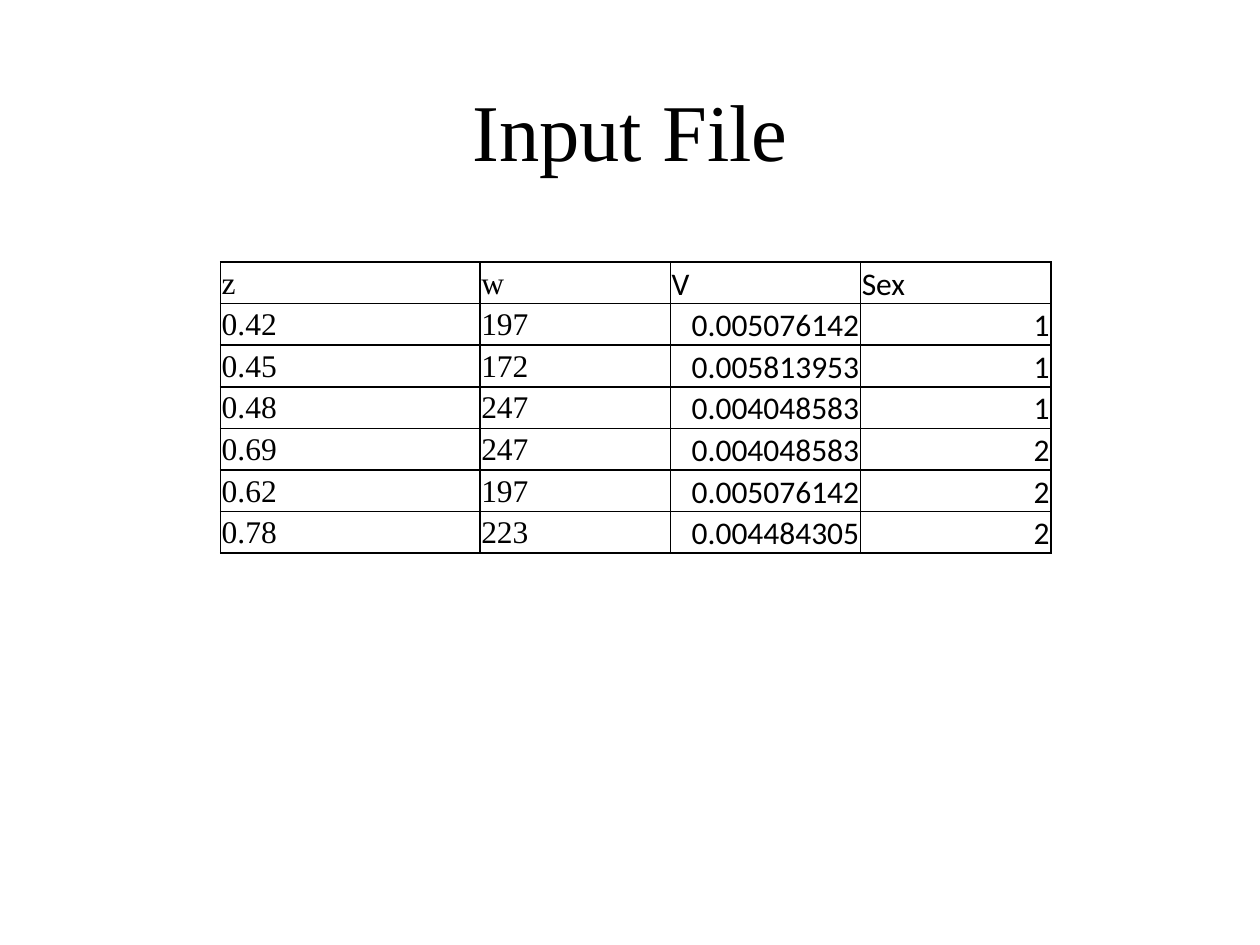
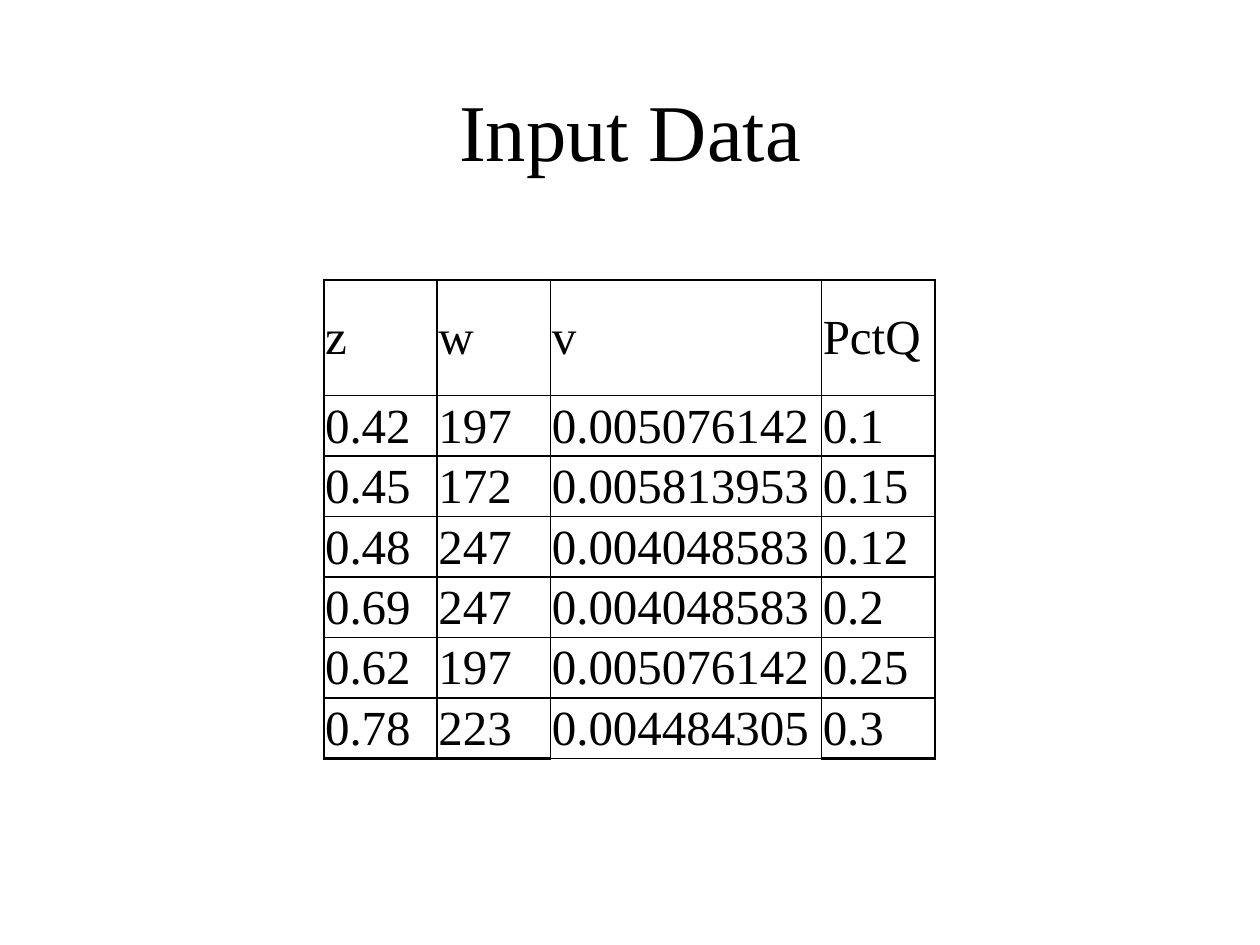
from dataclasses import dataclass

from lxml.etree import SubElement
from pptx import Presentation
from pptx.dml.color import RGBColor
from pptx.enum.text import MSO_ANCHOR as Anchor, PP_ALIGN as Align
from pptx.oxml.ns import qn
from pptx.util import Inches, Pt


# Theme
@dataclass(frozen=True)
class Theme:
    ink: str = "000000"
    paper: str = "FFFFFF"
    serif: str = "Times New Roman"
    sans: str = "Calibri"
    title_size: int = 46
    thin: float = 1
    heavy: float = 1.5
    cell_inset: float = 0.01


THEME = Theme()
INK = RGBColor.from_string(THEME.ink)
WIDTH, HEIGHT = 10, 7.5
TITLE_BOX = (1, 0.55, 8, 0.95)

# Content: measurements shared by both slides, then one extra column each
SAMPLES = [
    ("0.42", "197", "0.005076142"),
    ("0.45", "172", "0.005813953"),
    ("0.48", "247", "0.004048583"),
    ("0.69", "247", "0.004048583"),
    ("0.62", "197", "0.005076142"),
    ("0.78", "223", "0.004484305"),
]
SLIDES = [
    {
        "title": "Input File",
        "header": ("z", "w", "V", "Sex"),
        "extra": ("1", "1", "1", "2", "2", "2"),
        "corner": (1.75, 2.08),
        "columns": (2.06, 1.51, 1.51, 1.51),
        "header_height": 0.33,
        "row_height": 0.33,
        "size": 18,
        "sans_columns": (2, 3),
        "heavy_edges": (),
        "heavy_foot_columns": (),
    },
    {
        "title": "Input Data",
        "header": ("z", "w", "v", "PctQ"),
        "extra": ("0.1", "0.15", "0.12", "0.2", "0.25", "0.3"),
        "corner": (2.57, 2.22),
        "columns": (0.9, 0.9, 2.15, 0.9),
        "header_height": 0.92,
        "row_height": 0.48,
        "size": 28,
        "sans_columns": (),
        "heavy_edges": ("top", "right"),
        "heavy_foot_columns": (0, 1, 3),
    },
]


def style_paragraph(para, text, size, font_name, align):
    para.text = text
    para.alignment = align
    para.font.size = Pt(size)
    para.font.name = font_name
    para.font.color.rgb = INK


def add_title(page, text):
    box = page.shapes.add_textbox(*map(Inches, TITLE_BOX))
    frame = box.text_frame
    frame.word_wrap = True
    frame.vertical_anchor = Anchor.MIDDLE
    style_paragraph(frame.paragraphs[0], text, THEME.title_size, THEME.serif, Align.CENTER)


def set_borders(cell, heavy_sides):
    properties = cell._tc.get_or_add_tcPr()
    for side in ("left", "right", "top", "bottom"):
        points = THEME.heavy if side in heavy_sides else THEME.thin
        line = SubElement(properties, qn(f"a:ln{side[0].upper()}"), w=str(Pt(points)))
        fill = SubElement(line, qn("a:solidFill"))
        SubElement(fill, qn("a:srgbClr"), val=THEME.ink)


def heavy_sides(content, row, column, last_row, last_column):
    sides = set()
    if row == 0:
        sides.add("top")
    if column == last_column:
        sides.add("right")
    sides &= set(content["heavy_edges"])
    if row == last_row and column in content["heavy_foot_columns"]:
        sides.add("bottom")
    return sides


def fill_cell(cell, text, content, row, column):
    is_sans = column in content["sans_columns"]
    inset = Inches(THEME.cell_inset)
    cell.margin_left = cell.margin_right = cell.margin_top = inset
    cell.margin_bottom = 0
    cell.vertical_anchor = Anchor.BOTTOM if is_sans else Anchor.MIDDLE
    style_paragraph(
        cell.text_frame.paragraphs[0], text, content["size"],
        THEME.sans if is_sans else THEME.serif,
        Align.RIGHT if is_sans and row else Align.LEFT,
    )


def add_data_table(page, content):
    rows = [content["header"]]
    rows += [(*sample, value) for sample, value in zip(SAMPLES, content["extra"])]
    widths = content["columns"]
    heights = [content["header_height"]] + [content["row_height"]] * len(SAMPLES)
    extent = (*content["corner"], sum(widths), sum(heights))
    table = page.shapes.add_table(len(rows), len(widths), *map(Inches, extent)).table
    table.first_row = table.horz_banding = False
    for column, width in zip(table.columns, widths):
        column.width = Inches(width)
    for row, height in zip(table.rows, heights):
        row.height = Inches(height)
    for r, values in enumerate(rows):
        for c, text in enumerate(values):
            cell = table.cell(r, c)
            fill_cell(cell, text, content, r, c)
            set_borders(cell, heavy_sides(content, r, c, len(rows) - 1, len(widths) - 1))
            cell.fill.background()


def main():
    deck = Presentation()
    deck.slide_width, deck.slide_height = Inches(WIDTH), Inches(HEIGHT)
    for content in SLIDES:
        page = deck.slides.add_slide(deck.slide_layouts[6])
        page.background.fill.solid()
        page.background.fill.fore_color.rgb = RGBColor.from_string(THEME.paper)
        add_title(page, content["title"])
        add_data_table(page, content)
    deck.save("out.pptx")


if __name__ == "__main__":
    main()
